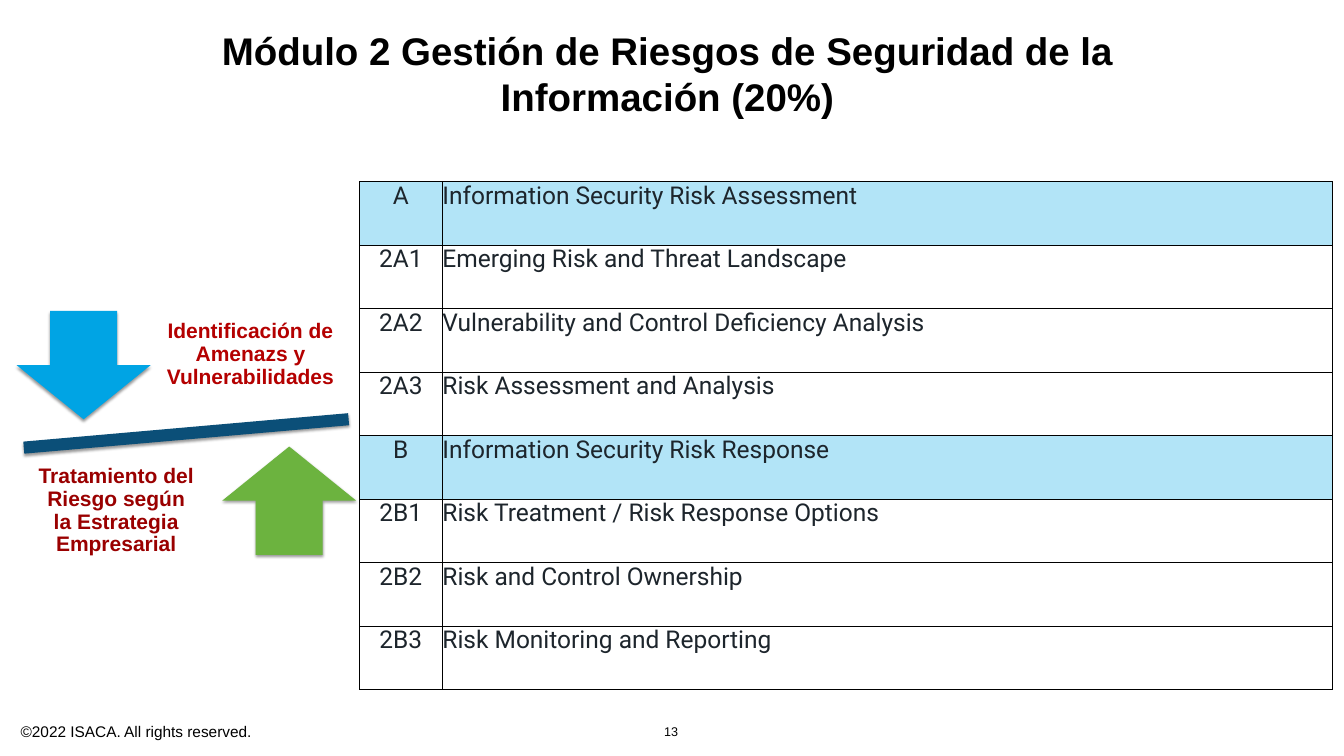
from dataclasses import dataclass

from lxml import etree
from pptx import Presentation
from pptx.dml.color import RGBColor
from pptx.enum.shapes import MSO_SHAPE
from pptx.enum.text import MSO_ANCHOR, MSO_AUTO_SIZE, PP_ALIGN
from pptx.oxml import parse_xml
from pptx.oxml.ns import nsdecls, qn
from pptx.util import Inches, Pt

LEFT, CENTER = PP_ALIGN.LEFT, PP_ALIGN.CENTER
MIDDLE, BOTTOM = MSO_ANCHOR.MIDDLE, MSO_ANCHOR.BOTTOM
FIT, FIXED = MSO_AUTO_SIZE.SHAPE_TO_FIT_TEXT, MSO_AUTO_SIZE.NONE
RECT, DOWN, UP = MSO_SHAPE.RECTANGLE, MSO_SHAPE.DOWN_ARROW, MSO_SHAPE.UP_ARROW
BLACK = "000000"
INK = "1D252C"
SKY = "B2E4F7"


@dataclass
class Label:
    text: str
    box: tuple[float, float, float, float]
    size: int
    color: str = BLACK
    bold: bool = False
    align: PP_ALIGN = CENTER
    anchor: MSO_ANCHOR = MIDDLE
    inset: float = 0.06
    wrap: bool = True
    fit: MSO_AUTO_SIZE = FIT
    spacing: float = 1.0


@dataclass
class Block:
    kind: MSO_SHAPE
    box: tuple[float, float, float, float]
    color: str
    turn: float = 0


@dataclass
class Topic:
    code: str
    name: str
    head: bool = False


LABELS = [
    Label("©2022\u00a0ISACA. All rights reserved.", (0.35, 14.28, 4.71, 0.46), 22,
          align=LEFT, wrap=False),
    Label("Módulo 2 Gestión de Riesgos de Seguridad de la Información (20%)",
          (3.38, 0.46, 19.73, 1.98), 55, bold=True),
    Label("13", (13.12, 14.31, 0.4, 0.41), 18, anchor=BOTTOM, wrap=False),
    Label("Identificación de Amenazs y Vulnerabilidades", (3.13, 6.28, 3.68, 1.51),
          30, "B40000", True, inset=0.12, fit=FIXED, spacing=0.9),
    Label("Tratamiento del Riesgo según la Estrategia Empresarial",
          (0.6, 9.19, 3.41, 1.9), 30, "9A0000", True, inset=0.12, fit=FIXED,
          spacing=0.9),
]
BLOCKS = [
    Block(RECT, (0.46, 8.48, 6.47, 0.24), "0B4F78", 355),
    Block(DOWN, (0.33, 6.17, 2.66, 2.15), "00A4E4"),
    Block(UP, (4.41, 8.86, 2.66, 2.15), "6CB33F"),
]
TOPICS = [
    Topic("A", "Information Security Risk Assessment", True),
    Topic("2A1", "Emerging Risk and Threat Landscape"),
    Topic("2A2", "Vulnerability and Control Deficiency Analysis"),
    Topic("2A3", "Risk Assessment and Analysis"),
    Topic("B", "Information Security Risk Response", True),
    Topic("2B1", "Risk Treatment / Risk Response Options"),
    Topic("2B2", "Risk and Control Ownership"),
    Topic("2B3", "Risk Monitoring and Reporting"),
]
WIDTHS = (1.65, 17.66)
ROW = 1.26


def paint(target, color: str) -> None:
    """Give a fill a solid colour."""
    target.solid()
    target.fore_color.rgb = RGBColor.from_string(color)


def style(font, name: str, size: int, color: str, bold: bool = False) -> None:
    font.name, font.size, font.bold = name, Pt(size), bold
    font.color.rgb = RGBColor.from_string(color)


def add_label(slide, label: Label) -> None:
    box = slide.shapes.add_textbox(*map(Inches, label.box))
    frame = box.text_frame
    frame.word_wrap, frame.auto_size = label.wrap, label.fit
    frame.vertical_anchor = label.anchor
    frame.margin_left = frame.margin_right = Inches(label.inset)
    frame.margin_top = frame.margin_bottom = Inches(label.inset)
    para = frame.paragraphs[0]
    para.text, para.alignment = label.text, label.align
    para.line_spacing = label.spacing
    style(para.font, "Arial", label.size, label.color, label.bold)


def add_block(slide, block: Block) -> None:
    shape = slide.shapes.add_shape(block.kind, *map(Inches, block.box))
    shape.rotation = block.turn
    paint(shape.fill, block.color)
    shape.line.fill.background()
    shape.shadow.inherit = False
    effects = shape._element.spPr.find(qn("a:effectLst"))
    effects.append(parse_xml(
        f'<a:outerShdw {nsdecls("a")} blurRad="{Pt(4)}" dist="{Pt(3)}" '
        f'dir="5400000" rotWithShape="0"><a:srgbClr val="{BLACK}">'
        '<a:alpha val="40000"/></a:srgbClr></a:outerShdw>'))


def add_edges(cell) -> None:
    """Draw a thin black line on all four sides of a cell."""
    props = cell._tc.get_or_add_tcPr()
    for side in "LRTB":
        line = etree.SubElement(props, qn(f"a:ln{side}"), w=str(Pt(1)))
        fill = etree.SubElement(line, qn("a:solidFill"))
        etree.SubElement(fill, qn("a:srgbClr"), val=BLACK)


def fill_cell(cell, text: str, align: PP_ALIGN, head: bool) -> None:
    cell.margin_left = cell.margin_right = 0
    cell.margin_top = cell.margin_bottom = 0
    add_edges(cell)
    if head:
        paint(cell.fill, SKY)
    else:
        cell.fill.background()
    para = cell.text_frame.paragraphs[0]
    para.text, para.alignment = text, align
    style(para.font, "Roboto", 35, INK)


def add_topics(slide) -> None:
    table = slide.shapes.add_table(
        len(TOPICS), len(WIDTHS), Inches(7.13), Inches(3.6),
        Inches(sum(WIDTHS)), Inches(ROW * len(TOPICS))).table
    table.first_row = table.horz_banding = False
    for col, width in zip(table.columns, WIDTHS):
        col.width = Inches(width)
    for row, topic in zip(table.rows, TOPICS):
        row.height = Inches(ROW)
        fill_cell(row.cells[0], topic.code, CENTER, topic.head)
        fill_cell(row.cells[1], topic.name, LEFT, topic.head)


def main() -> None:
    deck = Presentation()
    deck.slide_width, deck.slide_height = Inches(26.67), Inches(15)
    slide = deck.slides.add_slide(deck.slide_layouts[6])
    add_topics(slide)
    for block in BLOCKS:
        add_block(slide, block)
    for label in LABELS:
        add_label(slide, label)
    deck.save("out.pptx")


if __name__ == "__main__":
    main()
